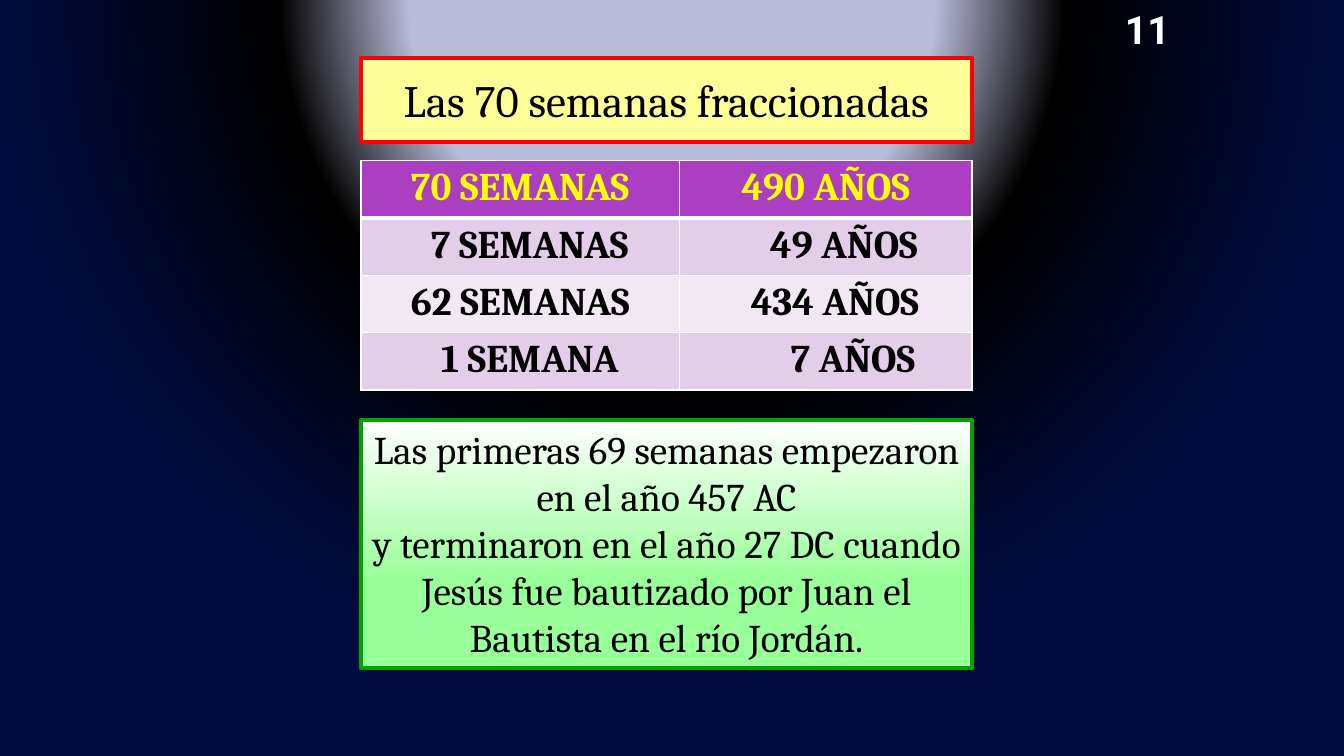
from dataclasses import dataclass

from pptx import Presentation
from pptx.dml.color import RGBColor
from pptx.enum.shapes import MSO_SHAPE
from pptx.enum.text import MSO_ANCHOR, MSO_AUTO_SIZE, PP_ALIGN
from pptx.oxml import parse_xml
from pptx.oxml.ns import nsdecls, qn
from pptx.slide import Slide
from pptx.table import _Cell
from pptx.text.text import TextFrame
from pptx.util import Inches, Pt

LEFT, WIDTH = 3.58, 6.06
ROW_HEIGHT = 0.57
COLUMN_WIDTHS = (3.16, 2.9)
CELL_MARGIN = 0.1


@dataclass
class Period:
    weeks: str
    years: str
    fill: str
    color: str = "000000"
    weeks_indent: float = 0
    years_indent: float = 0


PERIODS = [
    Period("70 SEMANAS", "490 AÑOS", "AC3EC1", "FFFF00"),
    Period("7 SEMANAS", "49 AÑOS", "E3CEE9", weeks_indent=0.19, years_indent=0.36),
    Period("62 SEMANAS", "434 AÑOS", "F1E8F4", years_indent=0.18),
    Period("1 SEMANA", "7 AÑOS", "E3CEE9", weeks_indent=0.19, years_indent=0.54),
]


def rgb(value: str) -> RGBColor:
    return RGBColor.from_string(value)


def write(tf: TextFrame, text: str, size: float, color: str = "000000",
          font: str = "Cambria", bold: bool = False) -> None:
    tf.text = text
    for p in tf.paragraphs:
        p.alignment = PP_ALIGN.CENTER
        for r in p.runs:
            r.font.name = font
            r.font.size = Pt(size)
            r.font.bold = bold
            r.font.color.rgb = rgb(color)


def set_outline(sp, color: str) -> None:
    sp.line.color.rgb = rgb(color)
    sp.line.width = Pt(3)


def set_background(slide: Slide, stops: list[tuple[int, str]]) -> None:
    slide.background.fill.gradient()
    grad = slide.element.find(".//" + qn("a:gradFill"))
    gs = "".join(f'<a:gs pos="{pos * 1000}"><a:srgbClr val="{color}"/></a:gs>'
                 for pos, color in stops)
    grad.getparent().replace(grad, parse_xml(
        f'<a:gradFill {nsdecls("a")} rotWithShape="1"><a:gsLst>{gs}</a:gsLst>'
        '<a:path path="circle"><a:fillToRect l="50000" t="-80000" r="50000" '
        'b="180000"/></a:path></a:gradFill>'))


def set_borders(cell: _Cell, top: float, bottom: float) -> None:
    tc_pr = cell._tc.get_or_add_tcPr()
    for side, width in (("L", 1), ("R", 1), ("T", top), ("B", bottom)):
        tc_pr.append(parse_xml(
            f'<a:ln{side} {nsdecls("a")} w="{Pt(width)}"><a:solidFill>'
            f'<a:srgbClr val="FFFFFF"/></a:solidFill></a:ln{side}>'))


def add_title(slide: Slide, text: str) -> None:
    sp = slide.shapes.title
    sp.left, sp.top = Inches(LEFT), Inches(0.67)
    sp.width, sp.height = Inches(WIDTH), Inches(0.64)
    sp.fill.solid()
    sp.fill.fore_color.rgb = rgb("FFFF99")
    set_outline(sp, "FF0000")
    tf = sp.text_frame
    tf.auto_size = MSO_AUTO_SIZE.SHAPE_TO_FIT_TEXT
    tf.vertical_anchor = MSO_ANCHOR.MIDDLE
    write(tf, text, 32)


def add_periods(slide: Slide, periods: list[Period]) -> None:
    table = slide.shapes.add_table(
        len(periods), len(COLUMN_WIDTHS), Inches(LEFT), Inches(1.59),
        Inches(WIDTH), Inches(ROW_HEIGHT * len(periods))).table
    for column, width in zip(table.columns, COLUMN_WIDTHS):
        column.width = Inches(width)
    for i, period in enumerate(periods):
        table.rows[i].height = Inches(ROW_HEIGHT)
        entries = ((period.weeks, period.weeks_indent),
                   (period.years, period.years_indent))
        for j, (text, indent) in enumerate(entries):
            cell = table.cell(i, j)
            set_borders(cell, top=3 if i == 1 else 1, bottom=3 if i == 0 else 1)
            cell.fill.solid()
            cell.fill.fore_color.rgb = rgb(period.fill)
            cell.margin_left = Inches(CELL_MARGIN + indent)
            write(cell.text_frame, text, 28, period.color, bold=True)


def add_explanation(slide: Slide, text: str) -> None:
    sp = slide.shapes.add_shape(MSO_SHAPE.RECTANGLE, Inches(LEFT), Inches(4.17),
                                Inches(WIDTH), Inches(2.46))
    sp.shadow.inherit = False
    sp.fill.gradient()
    sp.fill.gradient_angle = 270
    for stop, (position, color) in zip(sp.fill.gradient_stops,
                                       ((0, "FFFFFF"), (0.65, "99FF99"))):
        stop.position = position
        stop.color.rgb = rgb(color)
    set_outline(sp, "00A200")
    tf = sp.text_frame
    tf.word_wrap = True
    tf.auto_size = MSO_AUTO_SIZE.SHAPE_TO_FIT_TEXT
    tf.vertical_anchor = MSO_ANCHOR.TOP
    write(tf, text, 28)


def add_number(slide: Slide, text: str) -> None:
    sp = slide.shapes.add_textbox(Inches(11.03), Inches(0), Inches(0.7), Inches(0.57))
    tf = sp.text_frame
    tf.word_wrap = False
    tf.auto_size = MSO_AUTO_SIZE.SHAPE_TO_FIT_TEXT
    write(tf, text, 28, "FFFFFF", "Roboto", bold=True)


def main() -> None:
    prs = Presentation()
    prs.slide_width, prs.slide_height = Inches(13.33), Inches(7.5)
    slide = prs.slides.add_slide(prs.slide_layouts[5])

    # Background spotlight
    set_background(slide, [(34, "B9BBD8"), (51, "000000"), (91, "000C42")])

    # Title, table of periods and explanation
    add_title(slide, "Las 70 semanas fraccionadas")
    add_periods(slide, PERIODS)
    add_explanation(
        slide,
        "Las primeras 69 semanas empezaron en el año 457 AC\n"
        "y terminaron en el año 27 DC cuando Jesús fue bautizado "
        "por Juan el Bautista en el río Jordán.")

    # Slide number
    add_number(slide, "11")
    prs.save("out.pptx")


if __name__ == "__main__":
    main()
